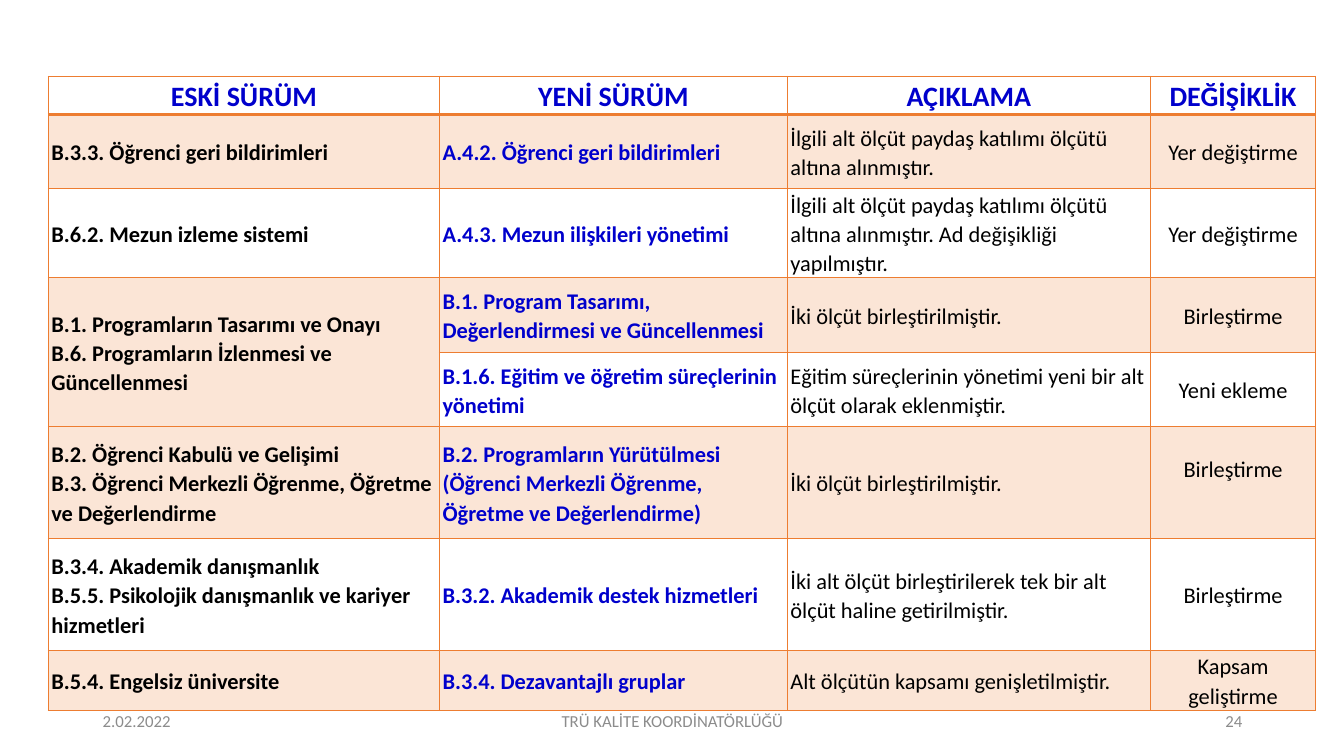
"""Build the slide comparing old and new quality criteria."""
import pptx
import pptx.dml.color
import pptx.enum.text
import pptx.oxml
import pptx.oxml.ns
import pptx.util

ALIGN = pptx.enum.text.PP_ALIGN
MIDDLE = pptx.enum.text.MSO_ANCHOR.MIDDLE
Inches = pptx.util.Inches

ORANGE, PEACH, BLUE, BLACK, GREY = "ED7D31", "FBE5D6", "0000CC", "000000", "8C8C8C"

HEADER = ["ESKİ SÜRÜM", "YENİ SÜRÜM", "AÇIKLAMA", "DEĞİŞİKLİK"]
CRITERIA = [
    ["B.3.3. Öğrenci geri bildirimleri", "A.4.2. Öğrenci geri bildirimleri",
     "İlgili alt ölçüt paydaş katılımı ölçütü altına alınmıştır.", "Yer değiştirme"],
    ["B.6.2. Mezun izleme sistemi", "A.4.3. Mezun ilişkileri yönetimi",
     "İlgili alt ölçüt paydaş katılımı ölçütü altına alınmıştır. Ad değişikliği yapılmıştır.",
     "Yer değiştirme"],
    ["B.1. Programların Tasarımı ve Onayı\nB.6. Programların İzlenmesi ve Güncellenmesi",
     "B.1. Program Tasarımı, Değerlendirmesi ve Güncellenmesi",
     "İki ölçüt birleştirilmiştir.", "Birleştirme"],
    [None, "B.1.6. Eğitim ve öğretim süreçlerinin yönetimi",
     "Eğitim süreçlerinin yönetimi yeni bir alt ölçüt olarak eklenmiştir.", "Yeni ekleme"],
    ["B.2. Öğrenci Kabulü ve Gelişimi\n"
     "B.3. Öğrenci Merkezli Öğrenme, Öğretme ve Değerlendirme",
     "B.2. Programların Yürütülmesi (Öğrenci Merkezli Öğrenme, Öğretme ve Değerlendirme)",
     "İki ölçüt birleştirilmiştir.", "Birleştirme"],
    ["B.3.4. Akademik danışmanlık\nB.5.5. Psikolojik danışmanlık ve kariyer hizmetleri",
     "B.3.2. Akademik destek hizmetleri",
     "İki alt ölçüt birleştirilerek tek bir alt ölçüt haline getirilmiştir.", "Birleştirme"],
    ["B.5.4. Engelsiz üniversite", "B.3.4. Dezavantajlı gruplar",
     "Alt ölçütün kapsamı genişletilmiştir.", "Kapsam geliştirme"],
]
COLUMN_WIDTHS = [3.88, 3.45, 3.6, 1.64]
ROW_HEIGHTS = [0.37, 0.74, 0.88, 0.74, 0.74, 1.11, 1.11, 0.58]
COLUMN_FORMATS = [
    dict(bold=True, color=BLACK),
    dict(bold=True, color=BLUE),
    dict(color=BLACK),
    dict(color=BLACK, align=ALIGN.CENTER),
]
HEADER_FORMAT = dict(size=20, bold=True, color=BLUE, align=ALIGN.CENTER)
RAISED_CELL = (5, 3)
FOOTERS = [
    ("2.02.2022", 0.92, 3, ALIGN.LEFT),
    ("TRÜ KALİTE KOORDİNATÖRLÜĞÜ", 4.42, 4.5, ALIGN.CENTER),
    ("24", 9.42, 3, ALIGN.RIGHT),
]


def rgb(value):
    """Return the colour of a hex string."""
    return pptx.dml.color.RGBColor.from_string(value)


def write(frame, text, size=16, bold=False, color=BLACK, align=ALIGN.LEFT, spacing=1.07):
    """Write each line of text as one formatted paragraph."""
    frame.word_wrap = True
    for index, line in enumerate(text.split("\n")):
        paragraph = frame.add_paragraph() if index else frame.paragraphs[0]
        paragraph.alignment = align
        paragraph.line_spacing = spacing
        run = paragraph.add_run()
        run.text = line
        run.font.name, run.font.size = "Calibri", pptx.util.Pt(size)
        run.font.bold, run.font.color.rgb = bold, rgb(color)


def set_borders(cell, **widths):
    """Draw the cell's four borders, one point wide unless given."""
    properties = cell._tc.get_or_add_tcPr()
    for index, side in enumerate("LRTB"):
        width = pptx.util.Pt(widths.get(side, 1))
        properties.insert(index, pptx.oxml.parse_xml(
            f'<a:ln{side} {pptx.oxml.ns.nsdecls("a")} w="{width}"><a:solidFill>'
            f'<a:srgbClr val="{ORANGE}"/></a:solidFill></a:ln{side}>'))


def add_criteria_table(slide):
    """Add the table of old and new criteria."""
    rows = [HEADER] + CRITERIA
    table = slide.shapes.add_table(
        len(rows), len(HEADER), Inches(0.48), Inches(0.76),
        Inches(sum(COLUMN_WIDTHS)), Inches(sum(ROW_HEIGHTS))).table
    for column, width in zip(table.columns, COLUMN_WIDTHS):
        column.width = Inches(width)
    for row, height in zip(table.rows, ROW_HEIGHTS):
        row.height = Inches(height)
    for row_index, texts in enumerate(rows):
        for column_index, text in enumerate(texts):
            cell = table.cell(row_index, column_index)
            cell.vertical_anchor = MIDDLE
            cell.margin_left = cell.margin_right = Inches(0.03)
            cell.margin_top = Inches(0.01)
            raised = (row_index, column_index) == RAISED_CELL
            cell.margin_bottom = Inches(0.29 if raised else 0)
            if row_index % 2:
                cell.fill.solid()
                cell.fill.fore_color.rgb = rgb(PEACH)
            else:
                cell.fill.background()
            set_borders(cell, **{0: {"B": 2}, 1: {"T": 2}}.get(row_index, {}))
            if text is None:
                table.cell(row_index - 1, column_index).merge(cell)
            else:
                write(cell.text_frame, text,
                      **(COLUMN_FORMATS[column_index] if row_index else HEADER_FORMAT))


def main():
    """Create the presentation and save it."""
    presentation = pptx.Presentation()
    presentation.slide_width, presentation.slide_height = Inches(13.33), Inches(7.5)
    slide = presentation.slides.add_slide(presentation.slide_layouts[6])
    add_criteria_table(slide)
    for text, left, width, align in FOOTERS:
        box = slide.shapes.add_textbox(Inches(left), Inches(6.95), Inches(width), Inches(0.4))
        box.text_frame.vertical_anchor = MIDDLE
        write(box.text_frame, text, size=12, color=GREY, align=align, spacing=1.0)
    presentation.save("out.pptx")


if __name__ == "__main__":
    main()
